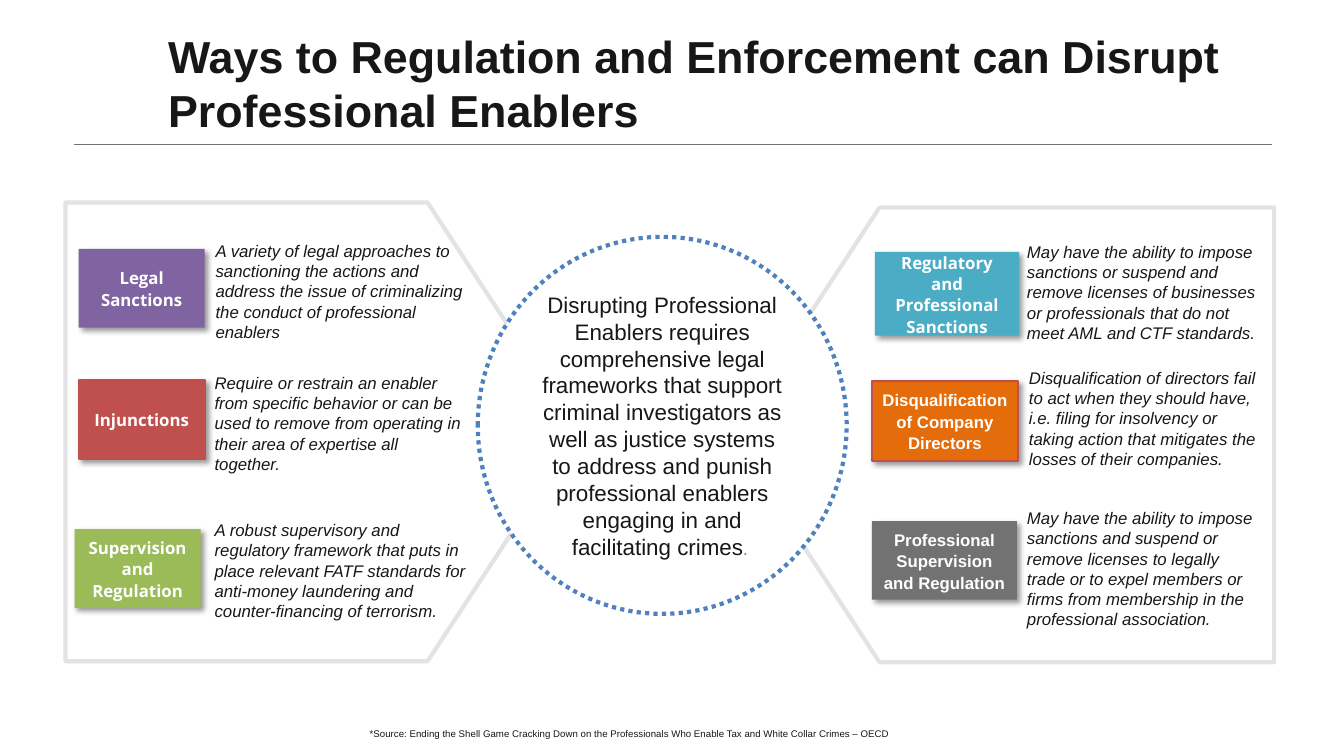
import pptx
import pptx.dml.color
import pptx.enum.dml
import pptx.enum.shapes
import pptx.enum.text
import pptx.util
import lxml.etree

Pt = pptx.util.Pt
Shape = pptx.enum.shapes.MSO_SHAPE
Anchor = pptx.enum.text.MSO_ANCHOR
Align = pptx.enum.text.PP_ALIGN

theme = {
    "ink": "171717", "white": "FFFFFF", "gray": "727272", "frame": "E3E3E3",
    "blue": "4F81BD", "red": "C0504D", "green": "9BBB59", "purple": "8064A2",
    "teal": "4BACC6", "orange": "E46C0A",
    "title": 32, "center": 16, "body": 12,
    "font": "Arial", "label_font": "Open Sans",
}

SHADOW = (
    '<a:outerShdw xmlns:a="http://schemas.openxmlformats.org/drawingml/2006/main" '
    'blurRad="50800" dist="38100" dir="2700000" algn="tl" rotWithShape="0">'
    '<a:srgbClr val="000000"><a:alpha val="40000"/></a:srgbClr></a:outerShdw>'
)

presentation = pptx.Presentation()
presentation.slide_width = Pt(960)
presentation.slide_height = Pt(540)
slide = presentation.slides.add_slide(presentation.slide_layouts[6])


def add_box(kind, left, top, width, height, fill=None, line=None, weight=0):
    shape = slide.shapes.add_shape(kind, Pt(left), Pt(top), Pt(width), Pt(height))
    shape.shadow.inherit = False
    if fill:
        shape.fill.solid()
        shape.fill.fore_color.rgb = pptx.dml.color.RGBColor.from_string(theme[fill])
    else:
        shape.fill.background()
    if line:
        shape.line.color.rgb = pptx.dml.color.RGBColor.from_string(theme[line])
        shape.line.width = Pt(weight)
    else:
        shape.line.fill.background()
    frame = shape.text_frame
    frame.margin_left = frame.margin_right = Pt(7.2)
    frame.margin_top = frame.margin_bottom = Pt(3.6)
    return shape


def write(shape, text, size="body", color="ink", font="font", bold=False,
          italic=False, align=Align.LEFT, anchor=Anchor.TOP):
    frame = shape.text_frame
    frame.word_wrap = True
    frame.vertical_anchor = anchor
    paragraph = frame.paragraphs[0]
    paragraph.alignment = align
    run = paragraph.add_run()
    run.text = text
    paragraph.font.size = Pt(theme[size])
    paragraph.font.name = theme[font]
    paragraph.font.bold = bold
    paragraph.font.italic = italic
    paragraph.font.color.rgb = pptx.dml.color.RGBColor.from_string(theme[color])
    return paragraph


rule = slide.shapes.add_connector(
    pptx.enum.shapes.MSO_CONNECTOR.STRAIGHT, Pt(52.6), Pt(103), Pt(908.6), Pt(103))
rule.line.color.rgb = pptx.dml.color.RGBColor.from_string(theme["gray"])
rule.line.width = Pt(0.5)
lxml.etree.SubElement(rule._element.spPr, pptx.oxml.ns.qn("a:effectLst"))

title = slide.shapes.add_textbox(Pt(113), Pt(18.7), Pt(778.3), Pt(80.6))
write(title, "Ways to Regulation and Enforcement can Disrupt Professional Enablers",
      "title", bold=True, anchor=Anchor.MIDDLE)

for left, top, width, height, rotation in [
    (522, 148.3, 388.1, 324.7, 180),
    (46.8, 144.7, 365.8, 327.6, 0),
]:
    panel = add_box(Shape.PENTAGON, left, top, width, height, line="frame", weight=3)
    panel.adjustments[0] = 0.327
    panel.rotation = rotation

circle = add_box(Shape.OVAL, 341.3, 169.2, 263.5, 269.3, "white", "blue", 3)
circle.line.dash_style = pptx.enum.dml.MSO_LINE.ROUND_DOT
circle.text_frame.margin_top = circle.text_frame.margin_bottom = Pt(7.2)
message = write(
    circle,
    "Disrupting Professional Enablers requires comprehensive legal frameworks that "
    "support criminal investigators as well as justice systems to address and punish "
    "professional enablers engaging in and facilitating crimes",
    "center", align=Align.CENTER, anchor=Anchor.MIDDLE)
period = message.add_run()
period.text = ". "
period.font.size = Pt(theme["body"])
period.font.color.rgb = pptx.dml.color.RGBColor.from_string(theme["gray"])

cards = [
    ("Legal Sanctions", "purple", None, "label_font", (56.2, 177.8, 90, 56.2),
     "A variety of legal approaches to sanctioning the actions and address the issue "
     "of criminalizing the conduct of professional enablers",
     (146.9, 168.5, 193)),
    ("Injunctions", "red", "red", "label_font", (56.2, 271.4, 90, 56.2),
     "Require or restrain an enabler from specific behavior or can be used to remove "
     "from operating in their area of expertise all together.",
     (146.2, 262.8, 192.2)),
    ("Supervision and Regulation", "green", None, "label_font", (53.3, 378, 90, 56.2),
     "A robust supervisory and regulatory framework that puts in place relevant FATF "
     "standards for anti-money laundering and counter-financing of terrorism.",
     (146.2, 367.9, 195.1)),
    ("Regulatory and Professional Sanctions", "teal", None, "label_font",
     (625, 180, 103, 59.8),
     "May have the ability to impose sanctions or suspend and remove licenses of "
     "businesses or professionals that do not meet AML and CTF standards.",
     (726.5, 169.2, 183.6)),
    ("Disqualification of Company Directors", "orange", "red", "font",
     (622.8, 272.2, 104.4, 56.9),
     "Disqualification of directors fail to act when they should have, i.e. filing for "
     "insolvency or taking action that mitigates the losses of their companies.",
     (727.9, 259.2, 178.6)),
    ("Professional Supervision and Regulation", "gray", None, "font",
     (622.8, 372.2, 103.7, 56.2),
     "May have the ability to impose sanctions and suspend or remove licenses to "
     "legally trade or to expel members or firms from membership in the professional "
     "association.",
     (726.5, 359.3, 182.2)),
]

for heading, fill, line, font, bounds, description, (left, top, width) in cards:
    label = add_box(Shape.RECTANGLE, *bounds, fill, line, 1.5)
    effects = label._element.spPr.find(pptx.oxml.ns.qn("a:effectLst"))
    effects.append(lxml.etree.fromstring(SHADOW))
    label.text_frame.margin_top = label.text_frame.margin_bottom = Pt(7.2)
    paragraph = write(label, heading, color="white", font=font, bold=True,
                      align=Align.CENTER, anchor=Anchor.MIDDLE)
    paragraph.line_spacing = 1.06
    detail = slide.shapes.add_textbox(Pt(left), Pt(top), Pt(width), Pt(79.9))
    write(detail, description, italic=True)

source = slide.shapes.add_textbox(Pt(257), Pt(516.2), Pt(445), Pt(17.3))
citation = write(
    source,
    "*Source: Ending the Shell Game Cracking Down on the Professionals Who Enable "
    "Tax and White Collar Crimes – OECD")
citation.runs[0]._r.get_or_add_rPr().set("baseline", "100000")

presentation.save("out.pptx")
